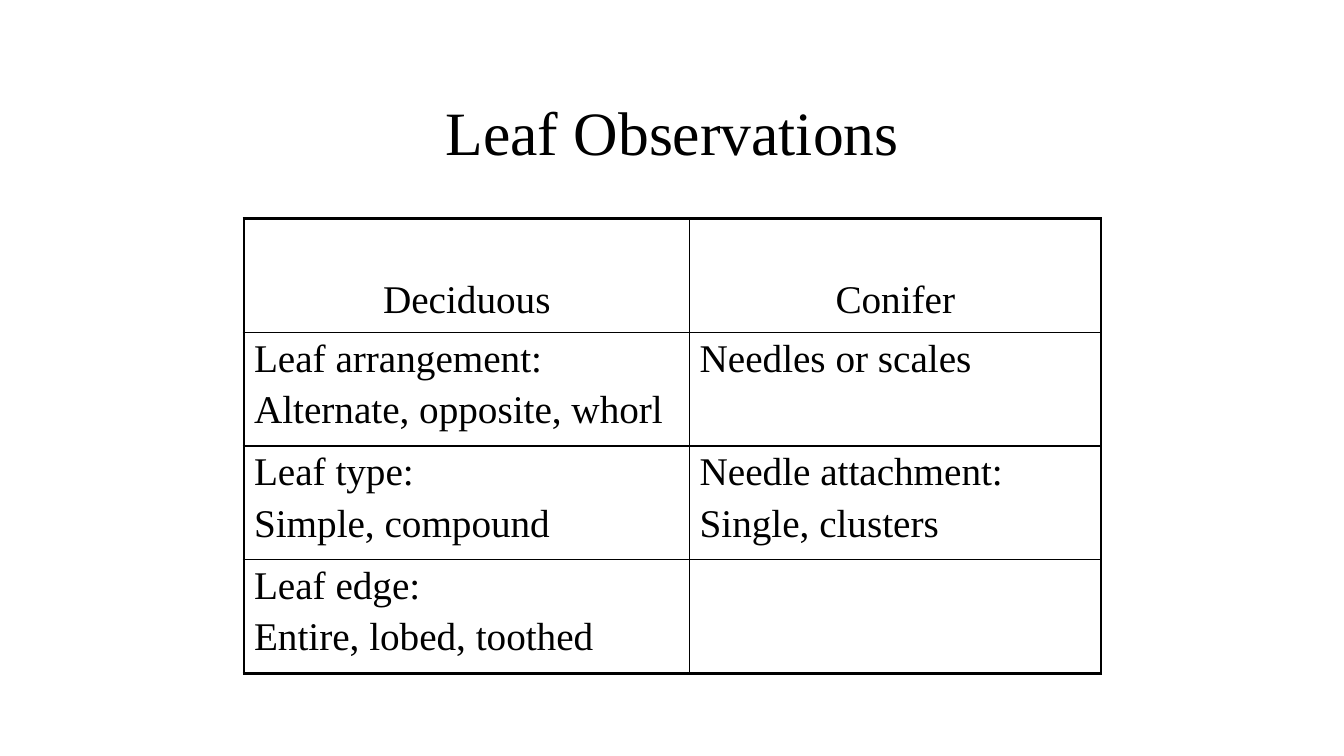
from dataclasses import dataclass

from lxml.etree import SubElement
from pptx import Presentation
from pptx.dml.color import RGBColor
from pptx.enum.text import MSO_ANCHOR, PP_ALIGN
from pptx.oxml.ns import qn
from pptx.slide import Slide
from pptx.table import _Cell
from pptx.text.text import TextFrame
from pptx.util import Inches, Pt

BLACK = RGBColor(0x00, 0x00, 0x00)
FONT = "Times New Roman"
LEFT = 2.42
WIDTH = 8.5
COLUMN_WIDTHS = (4.42, 4.08)
TABLE_HEIGHT = 4.51
INNER_LINE = 1
OUTER_LINE = 2.25


@dataclass(frozen=True)
class Observation:
    deciduous: str
    conifer: str


HEADINGS = Observation("Deciduous", "Conifer")
OBSERVATIONS = (
    Observation("Leaf arrangement:\nAlternate, opposite, whorl", "Needles or scales"),
    Observation("Leaf type:\nSimple, compound", "Needle attachment:\nSingle, clusters"),
    Observation("Leaf edge:\nEntire, lobed, toothed", ""),
)


def write_text(frame: TextFrame, text: str, size: float, align: PP_ALIGN) -> None:
    frame.text = text
    for index, paragraph in enumerate(frame.paragraphs):
        paragraph.alignment = align
        paragraph.font.name = FONT
        paragraph.font.size = Pt(size)
        paragraph.font.color.rgb = BLACK
        if index:
            paragraph.space_before = Pt(5.6)


def set_borders(cell: _Cell, outer_edges: dict[str, bool]) -> None:
    properties = cell._tc.get_or_add_tcPr()
    for edge, is_outer in outer_edges.items():
        width = Pt(OUTER_LINE if is_outer else INNER_LINE)
        line = SubElement(properties, qn(f"a:{edge}"), w=str(width))
        fill = SubElement(line, qn("a:solidFill"))
        SubElement(fill, qn("a:srgbClr"), val=str(BLACK))


def add_title(slide: Slide, text: str) -> None:
    title = slide.shapes.add_textbox(
        Inches(LEFT), Inches(0.67), Inches(WIDTH), Inches(1.25)
    )
    title.text_frame.word_wrap = True
    title.text_frame.vertical_anchor = MSO_ANCHOR.MIDDLE
    write_text(title.text_frame, text, 44, PP_ALIGN.CENTER)


def add_observations(slide: Slide, rows: tuple[Observation, ...]) -> None:
    table = slide.shapes.add_table(
        len(rows), len(COLUMN_WIDTHS),
        Inches(LEFT), Inches(2.17), Inches(WIDTH), Inches(TABLE_HEIGHT),
    ).table
    table.first_row = False
    table.horz_banding = False
    for column, width in zip(table.columns, COLUMN_WIDTHS):
        column.width = Inches(width)
    last_row, last_column = len(rows) - 1, len(COLUMN_WIDTHS) - 1
    for row_index, row in enumerate(rows):
        is_heading = row_index == 0
        for column_index, text in enumerate((row.deciduous, row.conifer)):
            cell = table.cell(row_index, column_index)
            set_borders(cell, {
                "lnL": column_index == 0,
                "lnR": column_index == last_column,
                "lnT": is_heading,
                "lnB": row_index == last_row,
            })
            cell.fill.background()
            cell.vertical_anchor = MSO_ANCHOR.BOTTOM if is_heading else MSO_ANCHOR.TOP
            cell.margin_bottom = Inches(0.1 if is_heading else 0.05)
            align = PP_ALIGN.CENTER if is_heading else PP_ALIGN.LEFT
            write_text(cell.text_frame, text, 28, align)


def main() -> None:
    presentation = Presentation()
    presentation.slide_width = Inches(13.33)
    presentation.slide_height = Inches(7.5)
    slide = presentation.slides.add_slide(presentation.slide_layouts[6])
    add_title(slide, "Leaf Observations")
    add_observations(slide, (HEADINGS, *OBSERVATIONS))
    presentation.save("out.pptx")


if __name__ == "__main__":
    main()
